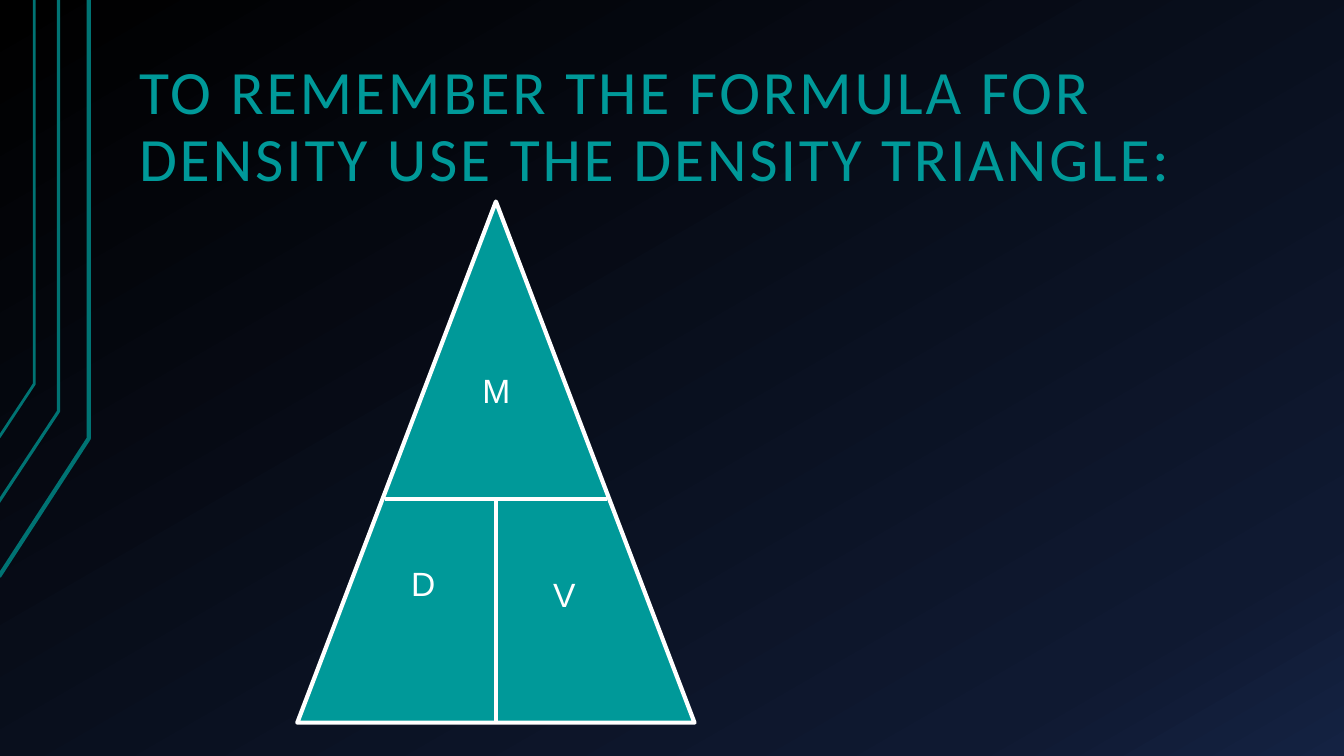
from dataclasses import dataclass

from lxml import etree
from pptx import Presentation
from pptx.dml.color import RGBColor
from pptx.enum.shapes import MSO_CONNECTOR as Connector, MSO_SHAPE as Shape
from pptx.enum.text import MSO_ANCHOR as Anchor
from pptx.oxml.ns import qn
from pptx.util import Pt


@dataclass(frozen=True)
class Theme:
    accent: str = "009999"
    trim: str = "007373"
    light: str = "FFFFFF"
    backdrop: tuple = ((0, "000000"), (85, "0F1931"), (100, "142242"))
    backdrop_angle: int = 60
    title_font: str = "Calibri"
    label_font: str = "Arial"
    title_size: int = 44
    label_size: int = 24
    outline: int = 3


THEME = Theme()


def style_line(line, color, width):
    line.color.rgb = RGBColor.from_string(color)
    line.width = Pt(width)


def set_backdrop(slide):
    slide.background.fill.gradient()
    gradient = next(slide.element.iter(qn("a:gradFill")))
    for child in list(gradient):
        gradient.remove(child)
    stops = etree.SubElement(gradient, qn("a:gsLst"))
    for position, color in THEME.backdrop:
        stop = etree.SubElement(stops, qn("a:gs"), pos=str(position * 1000))
        etree.SubElement(stop, qn("a:srgbClr"), val=color)
    angle = str(THEME.backdrop_angle * 60000)
    etree.SubElement(gradient, qn("a:lin"), ang=angle, scaled="0")


def add_trim(slide, points, width):
    start, *rest = [(Pt(x), Pt(y)) for x, y in points]
    builder = slide.shapes.build_freeform(*start)
    builder.add_line_segments(rest, close=False)
    shape = builder.convert_to_shape()
    shape.shadow.inherit = False
    shape.fill.background()
    style_line(shape.line, THEME.trim, width)


def add_text(slide, box, text, font, size, color):
    shape = slide.shapes.add_textbox(*map(Pt, box))
    shape.text_frame.word_wrap = True
    paragraph = shape.text_frame.paragraphs[0]
    run = paragraph.add_run()
    run.text = text
    run.font.name = font
    run.font.size = Pt(size)
    run.font.color.rgb = RGBColor.from_string(color)
    return shape.text_frame, paragraph, run


def add_title(slide, text):
    frame, paragraph, run = add_text(
        slide, (90, 18, 852, 126), text,
        THEME.title_font, THEME.title_size, THEME.accent)
    frame.vertical_anchor = Anchor.BOTTOM
    frame.margin_left = frame.margin_right = Pt(9.36)
    frame.margin_top = frame.margin_bottom = Pt(5.04)
    paragraph.line_spacing = 0.9
    run.font._element.set("spc", "200")


def add_triangle(slide, left, top, width, height):
    shape = slide.shapes.add_shape(
        Shape.ISOSCELES_TRIANGLE, Pt(left), Pt(top), Pt(width), Pt(height))
    shape.shadow.inherit = False
    shape.fill.solid()
    shape.fill.fore_color.rgb = RGBColor.from_string(THEME.accent)
    style_line(shape.line, THEME.light, THEME.outline)


def add_divider(slide, *ends):
    connector = slide.shapes.add_connector(Connector.STRAIGHT, *map(Pt, ends))
    style_line(connector.line, THEME.light, THEME.outline)
    etree.SubElement(connector.element.spPr, qn("a:effectLst"))


def main():
    presentation = Presentation()
    presentation.slide_width, presentation.slide_height = Pt(960), Pt(540)
    slide = presentation.slides.add_slide(presentation.slide_layouts[6])
    set_backdrop(slide)

    # Bent lines along the left edge: start, bend, line width
    for start, bend, width in (
        ((-0.7, 411.8), (63.4, 313.2), 3),
        ((-1.4, 359.3), (41.8, 293.8), 2.25),
        ((-0.7, 312.5), (24.5, 274.3), 2),
    ):
        add_trim(slide, (start, bend, (bend[0], 0)), width)

    add_title(slide, "TO REMEMBER THE FORMULA FOR DENSITY USE THE DENSITY TRIANGLE:")

    # Density triangle, split into three fields
    left, top, width, height = 212.4, 144, 283.7, 372.2
    middle, split = left + width / 2, 356.4
    half_split = 79.2
    add_triangle(slide, left, top, width, height)
    add_divider(slide, middle - half_split, split, middle + half_split, split)
    add_divider(slide, middle, split, middle, top + height)

    # Field letters
    for letter, x, y in (("D", 286.6, 398.9), ("M", 337.5, 260.6), ("V", 388.1, 406.1)):
        add_text(slide, (x, y, 51, 67.7), letter,
                 THEME.label_font, THEME.label_size, THEME.light)

    presentation.save("out.pptx")


if __name__ == "__main__":
    main()
